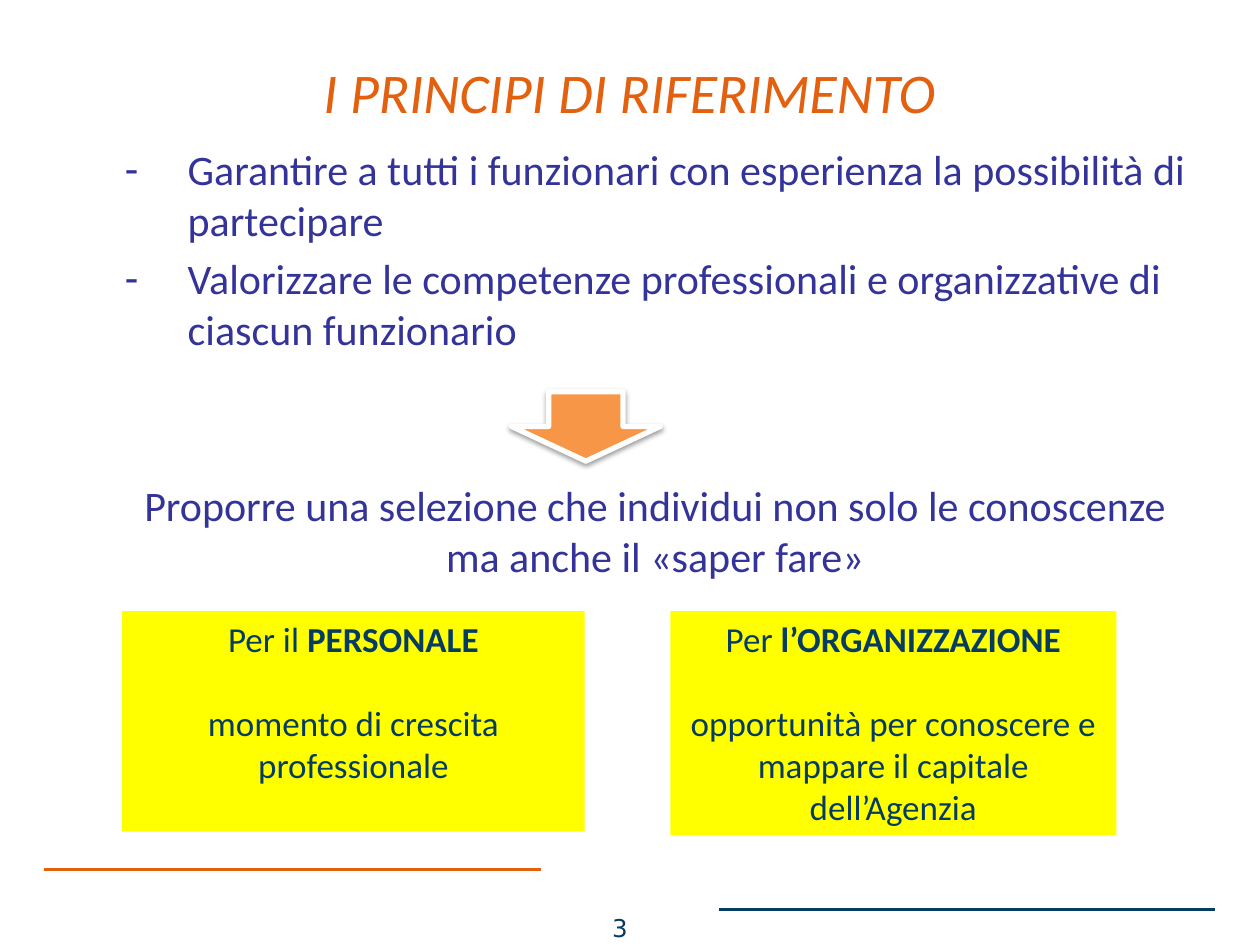
"""Build the slide on the guiding principles of the selection."""
from lxml import etree
from pptx import Presentation
from pptx.dml.color import RGBColor
from pptx.enum.shapes import MSO_CONNECTOR, MSO_SHAPE
from pptx.enum.text import MSO_ANCHOR, MSO_AUTO_SIZE, PP_ALIGN
from pptx.oxml import parse_xml
from pptx.oxml.ns import nsdecls, qn
from pptx.util import Inches, Pt

CENTER, LEFT = PP_ALIGN.CENTER, PP_ALIGN.LEFT
TOP, MIDDLE = MSO_ANCHOR.TOP, MSO_ANCHOR.MIDDLE
NO_AUTOFIT = MSO_AUTO_SIZE.NONE
STRAIGHT = MSO_CONNECTOR.STRAIGHT
RECTANGLE, DOWN_ARROW = MSO_SHAPE.RECTANGLE, MSO_SHAPE.DOWN_ARROW

ORANGE, NAVY, INDIGO = "E3600F", "073C62", "333399"
YELLOW, ARROW_ORANGE, WHITE = "FFFF00", "F79646", "FFFFFF"

PRINCIPLES = [
    "Garantire a tutti i funzionari con esperienza la possibilità di partecipare",
    "Valorizzare le competenze professionali e organizzative di ciascun funzionario",
]
PROPOSAL = ("Proporre una selezione che individui non solo le conoscenze "
            "ma anche il «saper fare»")


def rgb(color):
    """Return the colour for a hex string."""
    return RGBColor.from_string(color)


def style_font(font, size, color, name="Calibri"):
    """Set the size, colour and typeface of a font."""
    font.size = Pt(size)
    font.name = name
    font.color.rgb = rgb(color)


def place(shape, left, top, width, height):
    """Move and size a shape, in inches."""
    shape.left, shape.top = Inches(left), Inches(top)
    shape.width, shape.height = Inches(width), Inches(height)


def prepare_frame(frame, anchor):
    """Make a text frame wrap at a fixed size."""
    frame.word_wrap = True
    frame.auto_size = NO_AUTOFIT
    frame.vertical_anchor = anchor


def set_bullet(paragraph, char, margin, indent):
    """Give a paragraph its indents and a bullet, or none for an empty char."""
    properties = paragraph._p.get_or_add_pPr()
    properties.set("marL", str(Inches(margin)))
    properties.set("indent", str(Inches(indent)))
    bullet = etree.SubElement(properties, qn("a:buChar" if char else "a:buNone"))
    if char:
        bullet.set("char", char)


def fill_title(title, text):
    """Place and format the slide title."""
    place(title, 0.5, 0.3, 9, 0.85)
    title.text_frame.text = text
    prepare_frame(title.text_frame, MIDDLE)
    heading = title.text_frame.paragraphs[0]
    heading.alignment = CENTER
    style_font(heading.runs[0].font, 32, ORANGE)
    heading.runs[0].font.italic = True


def fill_body(body):
    """Write the principles and the proposal that follows from them."""
    place(body, 0.51, 1.09, 9, 4.03)
    frame = body.text_frame
    frame.text = "\n".join([*PRINCIPLES, PROPOSAL])
    prepare_frame(frame, TOP)
    for index, paragraph in enumerate(frame.paragraphs):
        is_principle = index < len(PRINCIPLES)
        paragraph.alignment = LEFT if is_principle else CENTER
        paragraph.space_before = Pt((0, 4.8, 72)[index])
        if is_principle:
            set_bullet(paragraph, "-", 0.88, -0.5)
        else:
            set_bullet(paragraph, "", 0.38, 0)
        style_font(paragraph.runs[0].font, 24, INDIGO)


def add_rule(slide, left, right, height, color):
    """Draw a horizontal footer line."""
    rule = slide.shapes.add_connector(
        STRAIGHT, Inches(left), Inches(height), Inches(right), Inches(height))
    rule.line.color.rgb = rgb(color)
    rule.line.width = Pt(2)
    etree.SubElement(rule._element.spPr, qn("a:effectLst"))


def add_arrow(slide):
    """Draw the down arrow with its soft shadow."""
    arrow = slide.shapes.add_shape(
        DOWN_ARROW, Inches(4.06), Inches(3.11), Inches(1.18), Inches(0.55))
    arrow.fill.solid()
    arrow.fill.fore_color.rgb = rgb(ARROW_ORANGE)
    arrow.line.color.rgb = rgb(WHITE)
    arrow.line.width = Pt(3)
    arrow._element.spPr.append(parse_xml(
        f'<a:effectLst {nsdecls("a")}><a:outerShdw blurRad="{Pt(3.1)}" '
        f'dist="{Pt(1.6)}" dir="5400000" rotWithShape="0"><a:srgbClr val="000000">'
        '<a:alpha val="38000"/></a:srgbClr></a:outerShdw></a:effectLst>'))


def add_benefit(slide, left, width, height, lead, beneficiary, benefit):
    """Add a yellow box naming a beneficiary and its benefit."""
    box = slide.shapes.add_shape(
        RECTANGLE, Inches(left), Inches(4.85), Inches(width), Inches(height))
    box.shadow.inherit = False
    box.fill.solid()
    box.fill.fore_color.rgb = rgb(YELLOW)
    box.line.fill.background()
    frame = box.text_frame
    frame.text = f"{lead}\n{benefit}"
    prepare_frame(frame, TOP)
    heading, detail = frame.paragraphs
    heading.add_run().text = beneficiary
    detail.space_before = Pt(24)
    for paragraph in (heading, detail):
        paragraph.alignment = CENTER
        for run in paragraph.runs:
            style_font(run.font, 20, NAVY)
    heading.runs[1].font.bold = True


def add_page_number(slide, number):
    """Write the page number at the bottom."""
    page = slide.shapes.add_textbox(
        Inches(4.37), Inches(7.22), Inches(1.1), Inches(0.28))
    frame = page.text_frame
    frame.text = number
    prepare_frame(frame, MIDDLE)
    frame.margin_top = frame.margin_bottom = 0
    frame.paragraphs[0].alignment = CENTER
    style_font(frame.paragraphs[0].runs[0].font, 14, NAVY, "DejaVu Sans")


def main():
    """Build and save the slide."""
    deck = Presentation()
    deck.slide_width, deck.slide_height = Inches(10), Inches(7.5)
    slide = deck.slides.add_slide(deck.slide_layouts[1])
    add_rule(slide, 0.35, 4.29, 6.9, ORANGE)
    add_rule(slide, 5.71, 9.64, 7.22, NAVY)
    fill_title(slide.shapes.title, "I PRINCIPI DI RIFERIMENTO")
    fill_body(slide.placeholders[1])
    add_page_number(slide, "3")
    add_arrow(slide)
    add_benefit(slide, 0.97, 3.67, 1.75, "Per il ", "PERSONALE",
                "momento di crescita professionale")
    add_benefit(slide, 5.32, 3.54, 1.78, "Per ", "l’ORGANIZZAZIONE",
                "opportunità per conoscere e mappare il capitale dell’Agenzia")
    deck.save("out.pptx")


if __name__ == "__main__":
    main()
